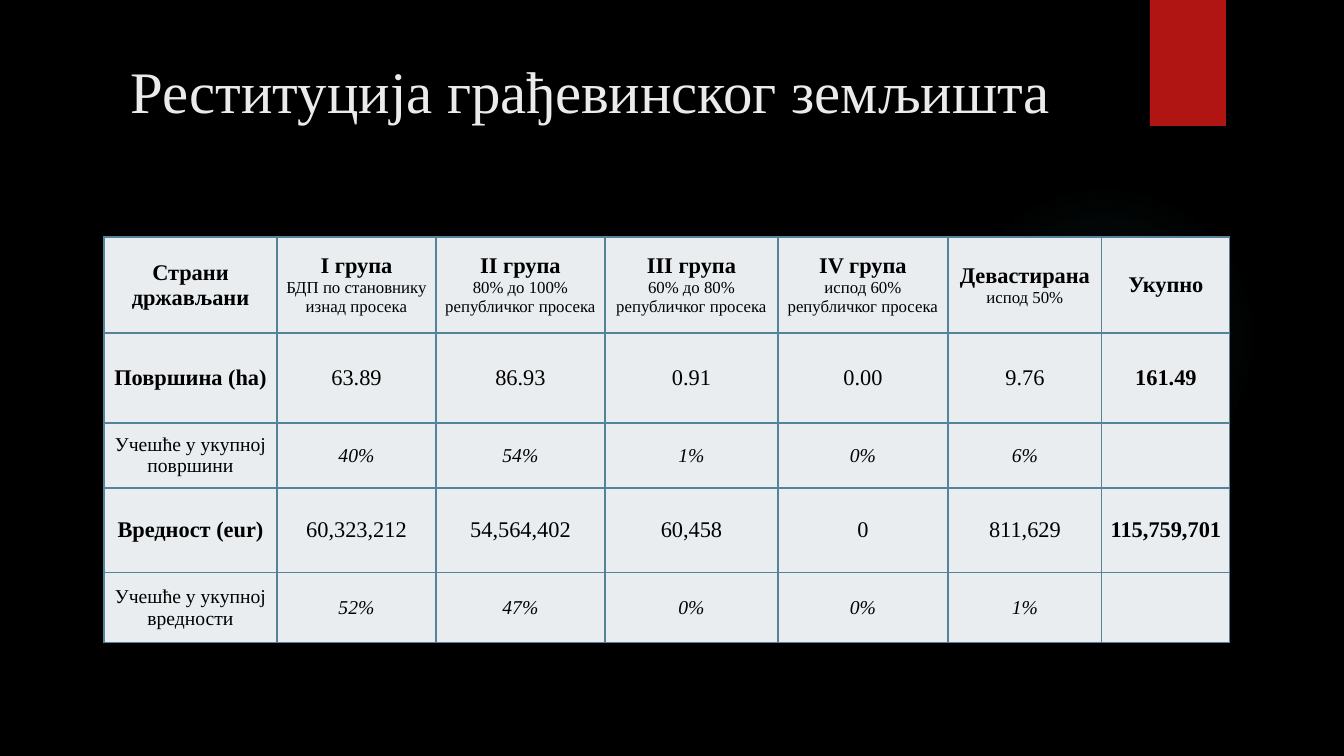
from lxml import etree
from pptx import Presentation
from pptx.dml.color import RGBColor
from pptx.enum import shapes, text
from pptx.oxml import ns
from pptx.util import Emu, Pt

BLACK = RGBColor(0x00, 0x00, 0x00)
RED = RGBColor(0xB0, 0x15, 0x13)
GLOW = RGBColor(0x50, 0xB9, 0xC1)
TITLE = RGBColor(0xEB, 0xEB, 0xEB)
CELL = RGBColor(0xE9, 0xED, 0xEF)
BORDER = RGBColor(0x54, 0x84, 0x9A)

# Text formats
HEAD = {"size": Pt(16), "bold": True, "italic": False}
NOTE = {"size": Pt(12), "bold": False, "italic": False}
VALUE = {"size": Pt(16), "bold": False, "italic": False}
LABEL = {"size": Pt(14), "bold": False, "italic": False}
SHARE = {"size": Pt(14), "bold": False, "italic": True}

# Table content: header cells as (name, note), then rows with their formats
HEADER = [
    ("Страни држављани",),
    ("I група", "БДП по становнику изнад просека"),
    ("II група", "80% до 100% републичког просека"),
    ("III група", "60% до 80% републичког просека"),
    ("IV група", "испод 60% републичког просека"),
    ("Девастирана", "испод 50%"),
    ("Укупно",),
]
AMOUNT_ROW = [HEAD] + [VALUE] * 5 + [HEAD]
SHARE_ROW = [LABEL] + [SHARE] * 6
ROWS = [
    (AMOUNT_ROW, ["Површина (ha)", "63.89", "86.93", "0.91", "0.00", "9.76", "161.49"]),
    (SHARE_ROW, ["Учешће у укупној површини", "40%", "54%", "1%", "0%", "6%", ""]),
    (AMOUNT_ROW, ["Вредност (eur)", "60,323,212", "54,564,402", "60,458", "0",
                  "811,629", "115,759,701"]),
    (SHARE_ROW, ["Учешће у укупној вредности", "52%", "47%", "0%", "0%", "1%", ""]),
]
COLUMN_WIDTHS = [173, 159, 169, 173, 170, 154, 128]
ROW_HEIGHTS = [96, 90, 65, 85, 70]


def add_node(parent, tag, **attributes):
    return etree.SubElement(parent, ns.qn(tag), attributes)


class SlideBuilder:
    FONT = "Times New Roman"
    SCALE = 12192000 / 1344

    def __init__(self, deck):
        deck.slide_width, deck.slide_height = self.px(1344), self.px(756)
        self.page = deck.slides.add_slide(deck.slide_layouts[5])
        fill = self.page.background.fill
        fill.solid()
        fill.fore_color.rgb = BLACK

    def px(self, length):
        return Emu(round(length * self.SCALE))

    def shape(self, kind, *place):
        shape = self.page.shapes.add_shape(kind, *map(self.px, place))
        shape.shadow.inherit = False
        shape.line.fill.background()
        return shape

    def block(self, color, *place):
        fill = self.shape(shapes.MSO_SHAPE.RECTANGLE, *place).fill
        fill.solid()
        fill.fore_color.rgb = color

    def glow(self, color, stops, *place):
        shape = self.shape(shapes.MSO_SHAPE.OVAL, *place)
        shape.fill.gradient()
        gradient = shape.element.spPr.find(ns.qn("a:gradFill"))
        for child in list(gradient):
            gradient.remove(child)
        stop_list = add_node(gradient, "a:gsLst")
        for position, opacity in stops:
            stop = add_node(stop_list, "a:gs", pos=str(position * 1000))
            shade = add_node(stop, "a:srgbClr", val=str(color))
            add_node(shade, "a:alpha", val=str(opacity * 1000))
        circle = add_node(gradient, "a:path", path="circle")
        add_node(circle, "a:fillToRect", l="50000", t="50000", r="50000", b="50000")

    def add_text(self, para, words, color, style):
        para.alignment = text.PP_ALIGN.CENTER
        span = para.add_run()
        span.text = words
        span.font.color.rgb = color
        for name, value in {"name": self.FONT, **style}.items():
            setattr(span.font, name, value)

    def title(self, words, *place):
        box = self.page.shapes.title
        box.left, box.top, box.width, box.height = map(self.px, place)
        frame = box.text_frame
        frame.word_wrap = True
        frame.auto_size = text.MSO_AUTO_SIZE.NONE
        frame.vertical_anchor = text.MSO_ANCHOR.TOP
        self.add_text(frame.paragraphs[0], words, TITLE, {"size": Pt(42)})

    def cell(self, cell, lines):
        layout = {"margin_left": self.px(7), "margin_right": self.px(7), "margin_top": 0,
                  "margin_bottom": 0, "vertical_anchor": text.MSO_ANCHOR.MIDDLE}
        for name, value in layout.items():
            setattr(cell, name, value)
        for side in ("a:lnL", "a:lnR", "a:lnT", "a:lnB"):
            line = add_node(cell._tc.get_or_add_tcPr(), side, w=str(Pt(1)))
            add_node(add_node(line, "a:solidFill"), "a:srgbClr", val=str(BORDER))
        cell.fill.solid()
        cell.fill.fore_color.rgb = CELL
        frame = cell.text_frame
        for index, (words, style) in enumerate(lines):
            para = frame.add_paragraph() if index else frame.paragraphs[0]
            self.add_text(para, words, BLACK, style)

    def table(self, rows, widths, heights, left, top):
        place = map(self.px, (left, top, sum(widths), sum(heights)))
        table = self.page.shapes.add_table(len(heights), len(widths), *place).table
        table.first_row = table.horz_banding = False
        for column, width in zip(table.columns, widths):
            column.width = self.px(width)
        for row, height, contents in zip(table.rows, heights, rows):
            row.height = self.px(height)
            for cell, lines in zip(row.cells, contents):
                self.cell(cell, lines)


def main():
    deck = Presentation()
    slide = SlideBuilder(deck)

    # Backdrop
    slide.glow(GLOW, [(0, 7), (36, 6), (69, 0)], 949, 184, 310, 310)
    slide.block(RED, 1150, 0, 76, 126)

    # Title
    slide.title("Реституција грађевинског земљишта", 72, 50, 1037, 154)

    # Table
    rows = [[list(zip(lines, (HEAD, NOTE))) for lines in HEADER]]
    for styles, values in ROWS:
        rows.append([[(value, style)] if value else [] for value, style in zip(values, styles)])
    slide.table(rows, COLUMN_WIDTHS, ROW_HEIGHTS, 104, 237)

    deck.save("out.pptx")


if __name__ == "__main__":
    main()
